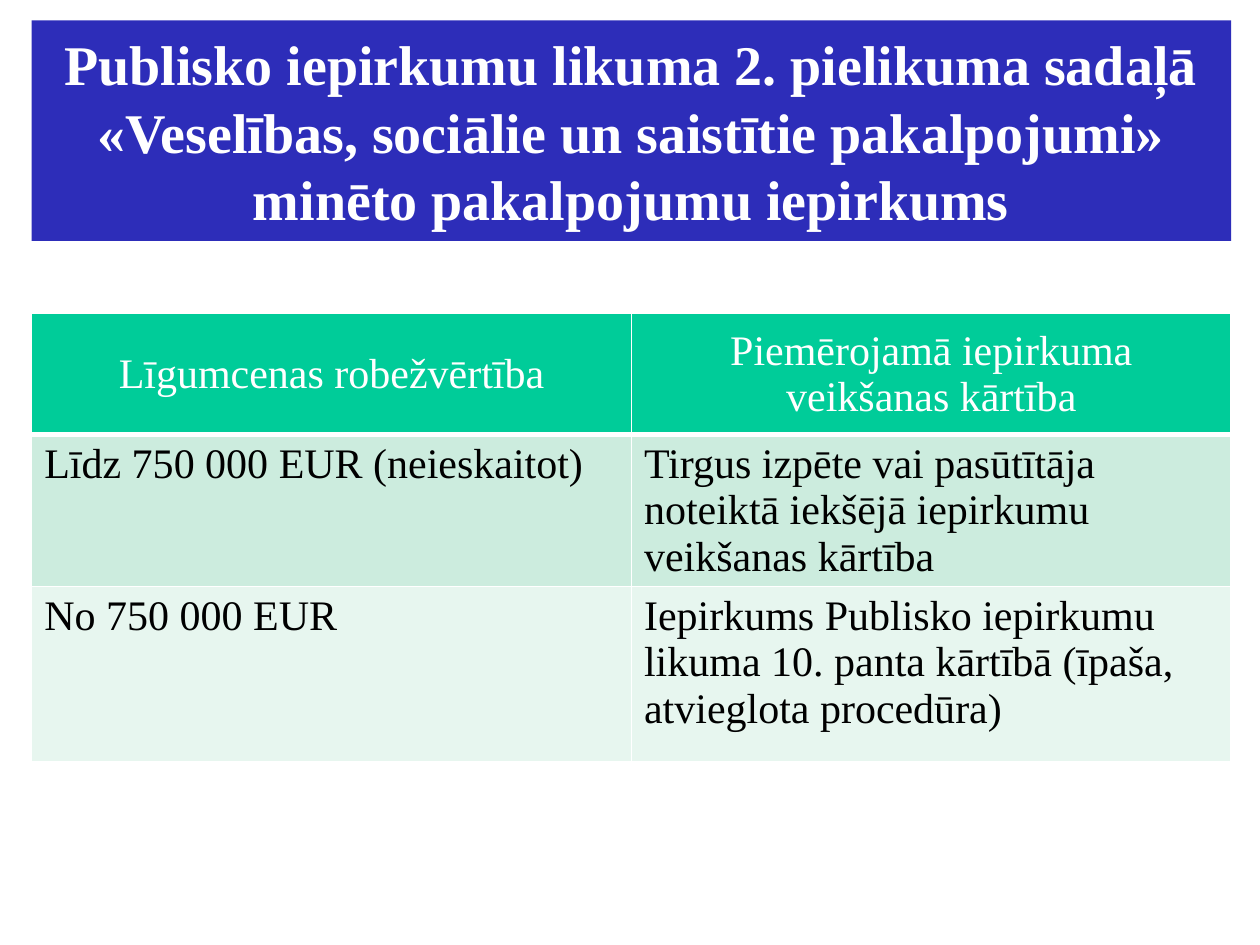
from lxml.etree import SubElement
from pptx import Presentation
from pptx.dml.color import RGBColor
from pptx.enum.shapes import MSO_SHAPE as Shape
from pptx.enum.text import MSO_ANCHOR as Anchor, PP_ALIGN as Align
from pptx.oxml.ns import qn
from pptx.util import Cm, Pt

WHITE = RGBColor(0xFF, 0xFF, 0xFF)
BLACK = RGBColor(0x00, 0x00, 0x00)
BLUE = RGBColor(0x2D, 0x2D, 0xB9)
GREEN = RGBColor(0x00, 0xCC, 0x99)
MINT = RGBColor(0xCC, 0xEC, 0xDE)
PALE_MINT = RGBColor(0xE7, 0xF6, 0xEF)

LEFT, WIDTH = 0.64, 24.18
TITLE = ("Publisko iepirkumu likuma 2. pielikuma sadaļā «Veselības, sociālie "
         "un saistītie pakalpojumi» minēto pakalpojumu iepirkums")
ROWS = [
    ("Līgumcenas robežvērtība", "Piemērojamā iepirkuma veikšanas kārtība"),
    ("Līdz 750 000 EUR (neieskaitot)",
     "Tirgus izpēte vai pasūtītāja noteiktā iekšējā iepirkumu veikšanas kārtība"),
    ("No 750 000 EUR",
     "Iepirkums Publisko iepirkumu likuma 10. panta kārtībā "
     "(īpaša, atvieglota procedūra)"),
]
ROW_HEIGHTS = [2.44, 2.44, 3.53]
ROW_FILLS = [GREEN, MINT, PALE_MINT]


class SlideBuilder:
    font_name = "Times New Roman"

    def __init__(self, page):
        self.page = page

    def add_text(self, frame, text, color, align, **formats):
        para = frame.paragraphs[0]
        para.alignment = align
        span = para.add_run()
        span.text = text
        span.font.color.rgb = color
        for name, value in {"name": self.font_name, **formats}.items():
            setattr(span.font, name, value)

    def banner(self, text, top, height):
        box = self.page.shapes.add_shape(
            Shape.RECTANGLE, Cm(LEFT), Cm(top), Cm(WIDTH), Cm(height))
        box.shadow.inherit = False
        box.fill.solid()
        box.fill.fore_color.rgb = BLUE
        box.line.fill.background()
        box.text_frame.word_wrap = True
        box.text_frame.vertical_anchor = Anchor.MIDDLE
        self.add_text(box.text_frame, text, WHITE, Align.CENTER,
                      size=Pt(32), bold=True)

    def borders(self, cell, bottom):
        properties = cell._tc.get_or_add_tcPr()
        for side, points in {"L": 1, "R": 1, "T": 1, "B": bottom}.items():
            line = SubElement(properties, qn(f"a:ln{side}"), w=str(Pt(points)))
            fill = SubElement(line, qn("a:solidFill"))
            SubElement(fill, qn("a:srgbClr"), val=str(WHITE))

    def table(self, rows, top):
        columns = len(rows[0])
        grid = self.page.shapes.add_table(
            len(rows), columns, Cm(LEFT), Cm(top),
            Cm(WIDTH), Cm(sum(ROW_HEIGHTS))).table
        for column in grid.columns:
            column.width = Cm(WIDTH / columns)
        for index, texts in enumerate(rows):
            header = index == 0
            grid.rows[index].height = Cm(ROW_HEIGHTS[index])
            for cell, text in zip(grid.rows[index].cells, texts):
                self.borders(cell, 3 if header else 1)
                cell.fill.solid()
                cell.fill.fore_color.rgb = ROW_FILLS[index]
                cell.vertical_anchor = Anchor.MIDDLE if header else Anchor.TOP
                self.add_text(cell.text_frame, text,
                              WHITE if header else BLACK,
                              Align.CENTER if header else Align.LEFT,
                              size=Pt(24), bold=False)


def main():
    deck = Presentation()
    deck.slide_width, deck.slide_height = Cm(25.4), Cm(19.05)
    builder = SlideBuilder(deck.slides.add_slide(deck.slide_layouts[6]))
    builder.banner(TITLE, top=0.41, height=4.45)
    builder.table(ROWS, top=6.32)
    deck.save("out.pptx")


if __name__ == "__main__":
    main()
